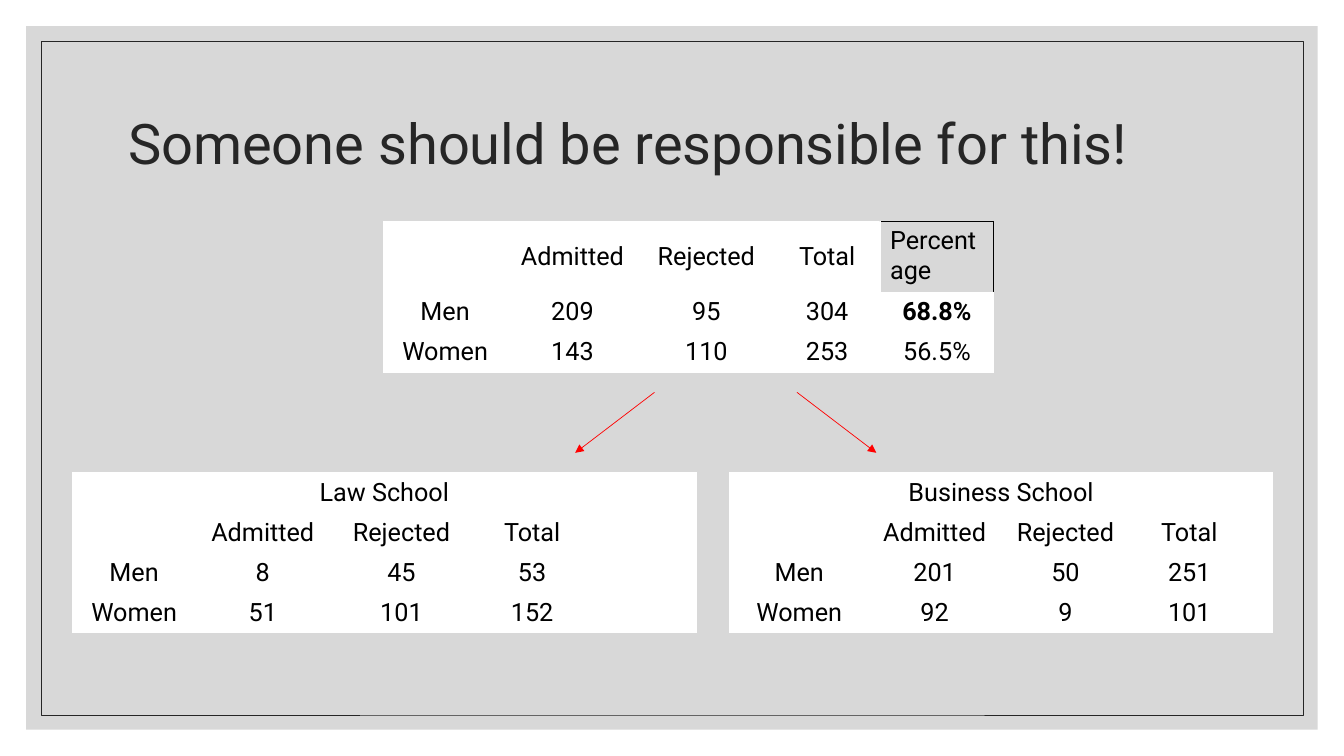
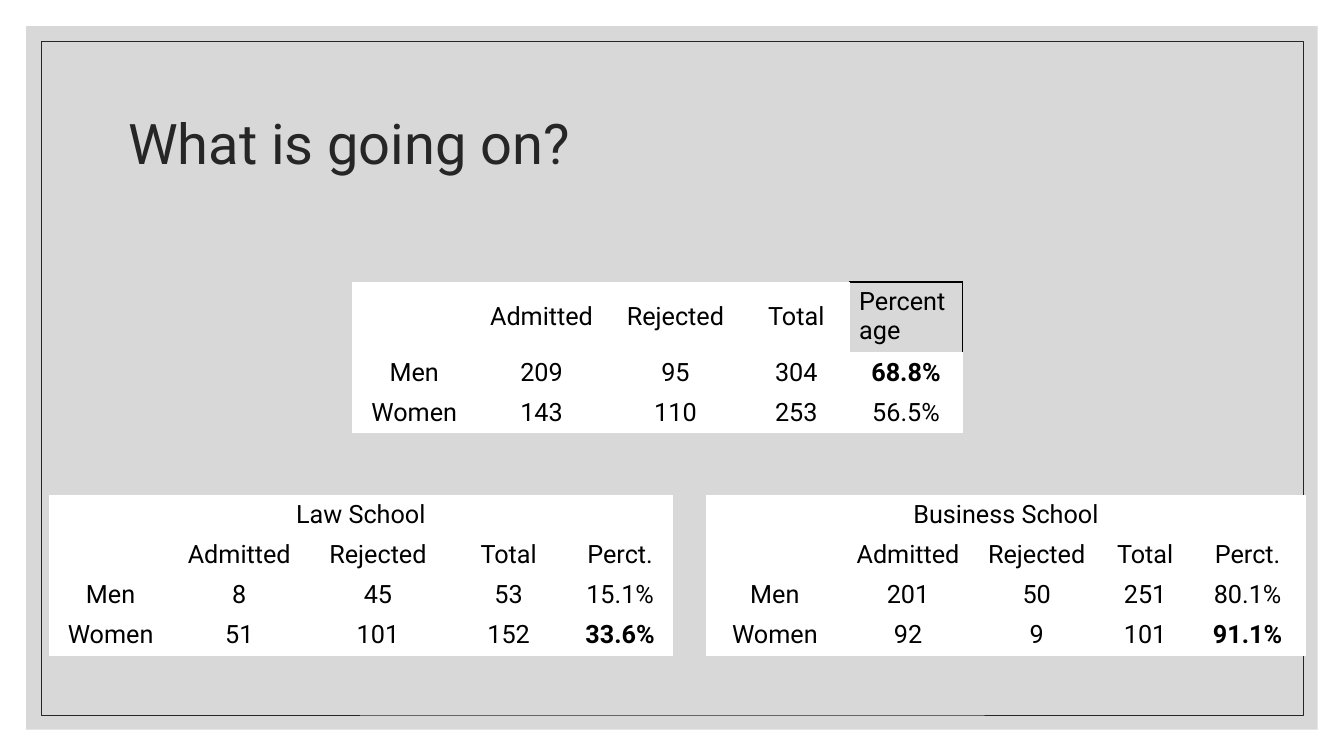
from dataclasses import dataclass

from lxml.etree import SubElement
from pptx import Presentation
from pptx.dml.color import RGBColor
from pptx.enum.shapes import MSO_CONNECTOR, MSO_SHAPE
from pptx.enum.text import MSO_ANCHOR, PP_ALIGN
from pptx.oxml.ns import qn
from pptx.util import Inches, Pt


@dataclass(frozen=True)
class Theme:
    font: str = "Roboto"
    panel: str = "BFBFBF"
    panel_opacity: int = 60
    ink: str = "262626"
    text: str = "000000"
    paper: str = "FFFFFF"
    arrow: str = "FF0000"
    title_size: int = 40
    table_size: int = 18
    hairline: float = 0.5
    cell_line: float = 0.75
    header_line: float = 1
    plain_table_style: str = "{2D5ABB26-0587-4C30-8999-92F81FD0307C}"


THEME = Theme()
SLIDE_WIDTH, SLIDE_HEIGHT = Inches(13.33), Inches(7.5)
# Rows of every table, as percent of the slide's height
ROW_HEIGHT, TALL_ROW_HEIGHT = 5.3, 9.2
TITLE_BOX = (8.8, 9.33, 82.5, 20)

# Admitted and rejected applicants
LAW = {"Men": (8, 45), "Women": (51, 101)}
BUSINESS = {"Men": (201, 50), "Women": (92, 9)}
OVERALL = {
    group: tuple(map(sum, zip(LAW[group], BUSINESS[group]))) for group in LAW
}

# Relative column widths
OVERALL_COLUMNS = (1.22, 1.31, 1.35, 1.05, 1.13)
LAW_COLUMNS = (1.22, 1.33, 1.42, 1.17, 1.04)


def across(percent):
    return round(SLIDE_WIDTH * percent / 100)


def down(percent):
    return round(SLIDE_HEIGHT * percent / 100)


def place(box):
    left, top, width, height = box
    return across(left), down(top), across(width), down(height)


def apply_format(target, values):
    for name, value in values.items():
        setattr(target, name, value)


def write(paragraph, text, size, color, bold=False):
    run = paragraph.add_run()
    run.text = text
    apply_format(run.font, {"name": THEME.font, "size": Pt(size), "bold": bold})
    run.font.color.rgb = RGBColor.from_string(color)


# Shared parts
def add_frame(slide, inset, filled):
    margin = across(inset)
    shape = slide.shapes.add_shape(
        MSO_SHAPE.RECTANGLE, margin, margin,
        SLIDE_WIDTH - 2 * margin, SLIDE_HEIGHT - 2 * margin,
    )
    shape.shadow.inherit = False
    if filled:
        shape.fill.solid()
        shape.fill.fore_color.rgb = RGBColor.from_string(THEME.panel)
        color = shape.fill._xPr.find(qn("a:solidFill"))[0]
        SubElement(color, qn("a:alpha"), val=str(THEME.panel_opacity * 1000))
        shape.line.fill.background()
    else:
        shape.fill.background()
        shape.line.color.rgb = RGBColor.from_string(THEME.ink)
        shape.line.width = Pt(THEME.hairline)


def add_title(slide, box, text):
    frame = slide.shapes.add_textbox(*place(box)).text_frame
    apply_format(frame, {"word_wrap": True, "vertical_anchor": MSO_ANCHOR.MIDDLE})
    paragraph = frame.paragraphs[0]
    paragraph.line_spacing = 0.9
    write(paragraph, text, THEME.title_size, THEME.ink)


def add_base_slide(presentation, title):
    slide = presentation.slides.add_slide(presentation.slide_layouts[6])
    add_frame(slide, 1.95, filled=True)
    add_frame(slide, 3.05, filled=False)
    add_title(slide, TITLE_BOX, title)
    return slide


# Tables
def set_borders(cell, sides):
    properties = cell._tc.get_or_add_tcPr()
    for side in "LRTB":
        color, width = sides.get(side, (THEME.paper, THEME.cell_line))
        line = SubElement(properties, qn(f"a:ln{side}"), w=str(Pt(width)))
        fill = SubElement(line, qn("a:solidFill"))
        SubElement(fill, qn("a:srgbClr"), val=color)


def fill_cell(cell, text, bold):
    set_borders(cell, {})
    cell.fill.solid()
    cell.fill.fore_color.rgb = RGBColor.from_string(THEME.paper)
    apply_format(cell, {
        "vertical_anchor": MSO_ANCHOR.MIDDLE, "margin_top": 0, "margin_bottom": 0,
    })
    paragraph = cell.text_frame.paragraphs[0]
    paragraph.alignment = PP_ALIGN.CENTER
    if text:
        write(paragraph, text, THEME.table_size, THEME.text, bold)


def fill_open_header(cell, text):
    edge = (THEME.text, THEME.header_line)
    set_borders(cell, {"T": edge, "R": edge})
    cell.fill.background()
    write(cell.text_frame.paragraphs[0], text, THEME.table_size, THEME.text)


def admission_rows(counts, rate_header):
    """Rows of (text, bold) pairs, with the higher admission rate in bold."""
    rates = {group: pair[0] / sum(pair) for group, pair in counts.items()}
    best = max(rates.values())
    headers = ("", "Admitted", "Rejected", "Total", rate_header)
    rows = [[(text, False) for text in headers]]
    for group, pair in counts.items():
        texts = (group, *map(str, pair), str(sum(pair)))
        rate = f"{rates[group]:.1%}" if rate_header else ""
        rows.append([(text, False) for text in texts] + [(rate, rates[group] == best)])
    return rows


def add_admission_table(slide, corner, width, columns, counts, rate_header="", school=""):
    rows = admission_rows(counts, rate_header)
    heights = [ROW_HEIGHT] * len(rows)
    if school:
        rows.insert(0, [(school, False)] + [("", False)] * (len(columns) - 1))
        heights.append(ROW_HEIGHT)
    else:
        heights[0] = TALL_ROW_HEIGHT
    graphic = slide.shapes.add_table(
        len(rows), len(columns), *place((*corner, width, sum(heights)))
    )
    table = graphic.table
    apply_format(table, {"first_row": False, "horz_banding": False})
    table._tbl.tblPr.find(qn("a:tableStyleId")).text = THEME.plain_table_style
    for column, share in zip(table.columns, columns):
        column.width = across(width * share / sum(columns))
    for row, height in zip(table.rows, heights):
        row.height = down(height)
    for row_index, row in enumerate(rows):
        for column_index, (text, bold) in enumerate(row):
            cell = table.cell(row_index, column_index)
            if text == "Percentage":
                fill_open_header(cell, text)
            else:
                fill_cell(cell, text, bold)
    if school:
        table.cell(0, 0).merge(table.cell(0, len(columns) - 1))


# Arrows that split the overall table into the two schools
def add_split_arrows(slide, center, top, bottom, start_offset, end_offset):
    for direction in (-1, 1):
        connector = slide.shapes.add_connector(
            MSO_CONNECTOR.STRAIGHT,
            across(center + direction * start_offset), down(top),
            across(center + direction * end_offset), down(bottom),
        )
        connector.line.color.rgb = RGBColor.from_string(THEME.arrow)
        connector.line.width = Pt(THEME.hairline)
        SubElement(connector.line._get_or_add_ln(), qn("a:tailEnd"), type="triangle")
        SubElement(connector._element.spPr, qn("a:effectLst"))


# Slides
def add_question_slide(presentation):
    slide = add_base_slide(presentation, "Someone should be responsible for this!")
    add_admission_table(slide, (28.55, 29.3), 45.4, OVERALL_COLUMNS, OVERALL, "Percentage")
    add_admission_table(slide, (5.4, 62.5), 46.4, LAW_COLUMNS, LAW, school="Law School")
    add_admission_table(slide, (54.3, 62.5), 40.3, (1.38, 1.31, 1.29, 1.17, 0.23),
                        BUSINESS, school="Business School")
    add_split_arrows(slide, 54, 51.9, 59.9, 5.3, 11.2)


def add_rates_slide(presentation):
    slide = add_base_slide(presentation, "What is going on?")
    add_admission_table(slide, (26.25, 37.3), 45.4, OVERALL_COLUMNS, OVERALL, "Percentage")
    add_admission_table(slide, (3.65, 65.5), 46.4, LAW_COLUMNS, LAW, "Perct.", "Law School")
    add_admission_table(slide, (52.55, 65.5), 44.6, (1.36, 1.28, 1.27, 0.88, 1.15),
                        BUSINESS, "Perct.", "Business School")


def main():
    presentation = Presentation()
    apply_format(presentation, {"slide_width": SLIDE_WIDTH, "slide_height": SLIDE_HEIGHT})
    add_question_slide(presentation)
    add_rates_slide(presentation)
    presentation.save("out.pptx")


if __name__ == "__main__":
    main()
